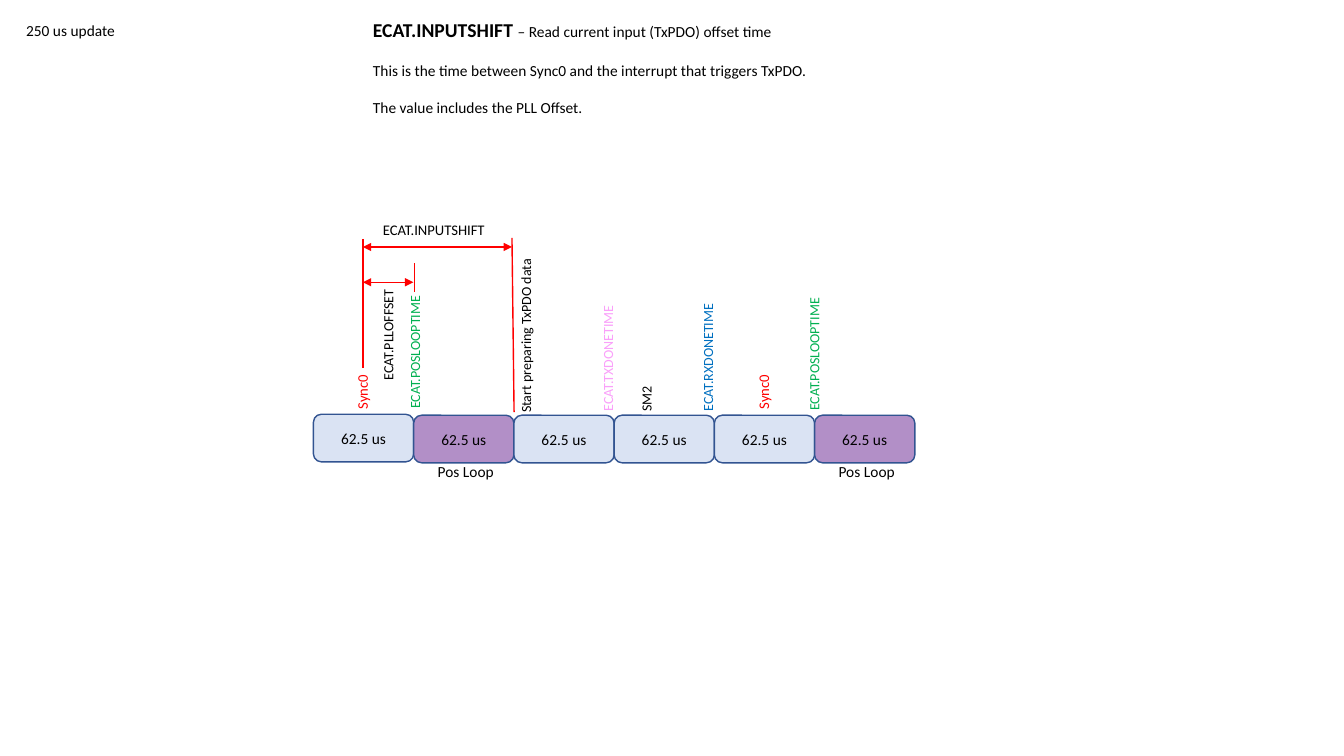
from lxml.etree import SubElement
from pptx import Presentation
from pptx.dml.color import RGBColor
from pptx.enum.shapes import MSO_CONNECTOR as Connector, MSO_SHAPE as Shape
from pptx.enum.text import MSO_ANCHOR as Anchor, MSO_AUTO_SIZE as AutoSize, PP_ALIGN as Align
from pptx.oxml.ns import qn
from pptx.util import Pt

BLACK = RGBColor(0x00, 0x00, 0x00)
RED = RGBColor(0xFF, 0x00, 0x00)
GREEN = RGBColor(0x00, 0xB0, 0x50)
BLUE = RGBColor(0x00, 0x70, 0xC0)
PINK = RGBColor(0xFA, 0xA0, 0xFA)
PALE = RGBColor(0xDA, 0xE3, 0xF3)
PURPLE = RGBColor(0xB2, 0x8F, 0xC7)
OUTLINE = RGBColor(0x32, 0x54, 0x91)

SLOT_WIDTH, SLOT_HEIGHT = 71.6, 34
SLOT_FILLS = [PALE, PURPLE, PALE, PALE, PALE, PURPLE]

EVENTS = [
    ("Sync0", 34.9, 2.9, 41, 10.5, RED),
    ("ECAT.PLLOFFSET", 53.6, -18, 84, 10, BLACK),
    ("ECAT.POSLOOPTIME", 72.7, 2.5, 101, 10, GREEN),
    ("Start preparing TxPDO data", 151.9, 5.4, 131, 10, BLACK),
    ("ECAT.TXDONETIME", 210.6, 4.3, 94, 10, PINK),
    ("SM2", 238, 4.7, 64, 10, BLACK),
    ("ECAT.RXDONETIME", 281.9, 4.3, 94, 10, BLUE),
    ("Sync0", 321.5, 2.9, 41, 10.5, RED),
    ("ECAT.POSLOOPTIME", 357.8, 4, 101, 10, GREEN),
]
GUIDES = [
    (35.3, -126, 35.3, -33.8),
    (72, -108.7, 72, -87.8),
    (141.8, -126.7, 143.3, -2.2),
]
SPANS = [(35.3, 71.3, -95), (35.3, 141.8, -120.2)]


def write(paragraph, text, size=11, color=BLACK, bold=False, align=Align.LEFT):
    """Add a formatted run of text to a paragraph."""
    paragraph.alignment = align
    run = paragraph.add_run()
    run.text = text
    run.font.name = "Calibri"
    run.font.size = Pt(size)
    run.font.bold = bold
    run.font.color.rgb = color


def add_label(slide, text, left, top, width, height=20.6, rotation=0, **style):
    """Place a text box with one line of text."""
    label = slide.shapes.add_textbox(Pt(left), Pt(top), Pt(width), Pt(height))
    label.rotation = rotation
    label.text_frame.word_wrap = True
    write(label.text_frame.paragraphs[0], text, **style)


def add_line(slide, x1, y1, x2, y2, arrows=False):
    """Draw a red line, with arrowheads at both ends on request."""
    line = slide.shapes.add_connector(Connector.STRAIGHT, Pt(x1), Pt(y1), Pt(x2), Pt(y2))
    line.line.color.rgb = RED
    line.line.width = Pt(1)
    if arrows:
        for end in ("a:headEnd", "a:tailEnd"):
            SubElement(line.line._get_or_add_ln(), qn(end), type="triangle")
    SubElement(line._element.spPr, qn("a:effectLst"))


def place(placeholder, left, top, width, height):
    """Move a placeholder and anchor its text at the top."""
    placeholder.left, placeholder.top = Pt(left), Pt(top)
    placeholder.width, placeholder.height = Pt(width), Pt(height)
    frame = placeholder.text_frame
    frame.word_wrap = True
    frame.auto_size = AutoSize.NONE
    frame.vertical_anchor = Anchor.TOP
    return frame


def build_heading(slide, left, top, width):
    """Fill the title and the explanation below it."""
    title = place(slide.shapes.title, left, top, width, 24.4).paragraphs[0]
    write(title, "ECAT.INPUTSHIFT ", size=14, bold=True)
    write(title, "– Read current input (TxPDO) offset time")

    explanation = place(slide.placeholders[1], left, top + 30.5, width, 48)
    sentences = [
        "This is the time between Sync0 and the interrupt that triggers TxPDO.",
        "The value includes the PLL Offset.",
    ]
    for index, sentence in enumerate(sentences):
        paragraph = explanation.add_paragraph() if index else explanation.paragraphs[0]
        paragraph.space_before = Pt(13.4 * index)
        write(paragraph, sentence)
        properties = paragraph._p.get_or_add_pPr()
        properties.set("marL", "0")
        properties.set("indent", "0")
        SubElement(properties, qn("a:buNone"))


def build_slots(slide, left, top):
    """Draw the row of time slots and mark the position loops."""
    for index, fill in enumerate(SLOT_FILLS):
        x = left + index * SLOT_WIDTH
        y = top if index else top - 0.7
        slot = slide.shapes.add_shape(
            Shape.ROUNDED_RECTANGLE, Pt(x), Pt(y), Pt(SLOT_WIDTH), Pt(SLOT_HEIGHT))
        slot.shadow.inherit = False
        slot.fill.solid()
        slot.fill.fore_color.rgb = fill
        slot.line.color.rgb = OUTLINE
        slot.line.width = Pt(1)
        slot.text_frame.vertical_anchor = Anchor.MIDDLE
        write(slot.text_frame.paragraphs[0], "62.5 us", align=Align.CENTER)
        if fill == PURPLE:
            add_label(slide, "Pos Loop", x + 10, top + 30.2, 63)


def build_events(slide, left, top):
    """Write the upright event names above the slots."""
    height = 20
    for name, center, bottom, length, size, color in EVENTS:
        add_label(slide, name, left + center - length / 2,
                  top + bottom - length / 2 - height / 2, length, height,
                  rotation=270, size=size, color=color)


def build_spans(slide, left, top):
    """Draw the guides and the measured time spans."""
    for x1, y1, x2, y2 in GUIDES:
        add_line(slide, left + x1, top + y1, left + x2, top + y2)
    for start, end, y in SPANS:
        add_line(slide, left + start, top + y, left + end, top + y, arrows=True)
    add_label(slide, "ECAT.INPUTSHIFT", left + 42.5, top - 142.6, 96, size=10.5)


def main():
    """Build and save the timing slide."""
    deck = Presentation()
    deck.slide_width, deck.slide_height = Pt(960), Pt(540)
    slide = deck.slides.add_slide(deck.slide_layouts[1])
    build_heading(slide, 259.2, 9.4, 416)
    add_label(slide, "250 us update", 11.5, 11.5, 82)
    for build in (build_slots, build_events, build_spans):
        build(slide, 223.9, 296.6)
    deck.save("out.pptx")


if __name__ == "__main__":
    main()
